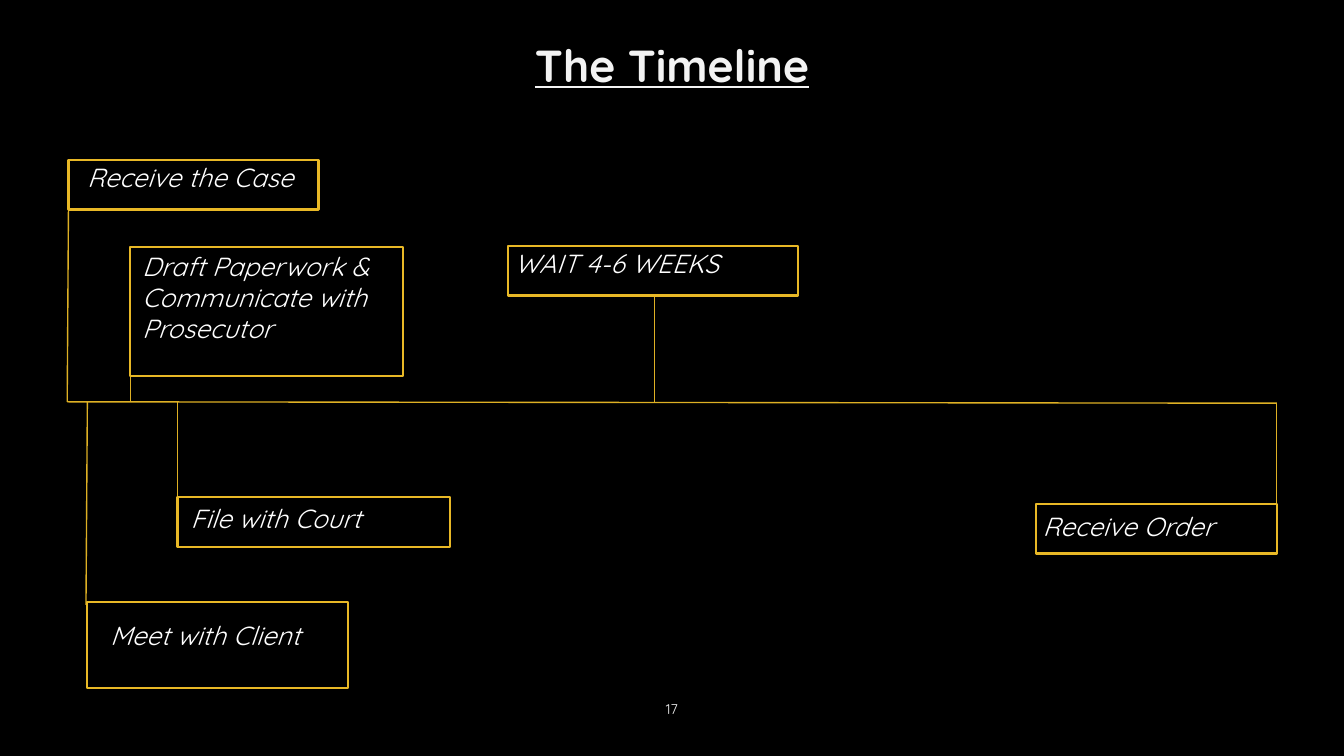
"""Build a slide that shows the timeline of a case as labelled boxes along an axis."""
from lxml.etree import SubElement
from pptx import Presentation
from pptx.dml.color import RGBColor
from pptx.enum.shapes import MSO_CONNECTOR, MSO_SHAPE
from pptx.enum.text import MSO_ANCHOR, MSO_AUTO_SIZE, PP_ALIGN
from pptx.oxml.ns import qn
from pptx.util import Inches, Pt

WIDTH = Inches(10)
HEIGHT = WIDTH * 9 // 16
CELL = 0.1
FONT = "Quicksand"
BLACK = RGBColor(0x00, 0x00, 0x00)
WHITE = RGBColor(0xFF, 0xFF, 0xFF)
TITLE_WHITE = RGBColor(0xF3, 0xF3, 0xF3)
NUMBER_WHITE = RGBColor(0xF2, 0xF2, 0xF2)
BOX_GOLD = RGBColor(0xE8, 0xB8, 0x26)
LINE_GOLD = RGBColor(0xDE, 0xB0, 0x24)

LEFT, RIGHT, AXIS = 5, 95, 29.9
STEPS = [
    ("Receive the Case", (5.1, 11.9, 18.6, 3.7), (4.7, 11, 25.3, 5.6)),
    ("Meet with Client", (6.5, 44.8, 19.4, 6.4), (6.4, 45.1, 19.8, 4.6)),
    ("Draft Paperwork & Communicate with Prosecutor",
     (9.7, 18.4, 20.3, 9.6), (8.8, 17.6, 22.3, 11.3)),
    ("File with Court", (13.2, 37, 20.3, 3.7), (12.4, 36.4, 22.3, 5.6)),
    ("WAIT 4-6 WEEKS", (37.8, 18.3, 21.6, 3.7), (36.5, 17.4, 25.3, 5.6)),
    ("Receive Order", (77.1, 37.5, 17.9, 3.7), (75.8, 37, 19.8, 5.6)),
]
LINES = [
    (LEFT, AXIS, RIGHT, 30),
    (5.1, 14.8, LEFT, AXIS),
    (6.5, AXIS, 6.4, 45),
    (9.7, 22, 9.7, AXIS),
    (13.2, AXIS, 13.2, 37.8),
    (48.7, 21.9, 48.7, AXIS),
    (RIGHT, 30, RIGHT, 40.7),
]


def grid(*cells):
    """Turn counts of grid columns and rows into slide lengths."""
    return [Inches(count * CELL) for count in cells]


def write(box, text, size, color, align=PP_ALIGN.LEFT, anchor=MSO_ANCHOR.TOP,
          bold=False, italic=False, underline=False, before=0, indent=0):
    """Put one formatted paragraph into a box."""
    frame = box.text_frame
    frame.word_wrap = True
    frame.auto_size = MSO_AUTO_SIZE.NONE
    frame.vertical_anchor = anchor
    frame.margin_left = frame.margin_right = Inches(0.1)
    frame.margin_top = frame.margin_bottom = Inches(0.1)
    para = frame.paragraphs[0]
    para.alignment = align
    para.space_before = Pt(before)
    para._p.get_or_add_pPr().set("marL", str(Inches(indent)))
    span = para.add_run()
    span.text = text
    font = span.font
    font.name, font.size = FONT, Pt(size)
    font.bold, font.italic, font.underline = bold, italic, underline
    font.color.rgb = color


def add_title(page, text):
    """Place and fill the title placeholder."""
    title = page.shapes.title
    title.left, title.top, title.width, title.height = grid(5, -0.5, 90, 10.6)
    write(title, text, 24, TITLE_WHITE, align=PP_ALIGN.CENTER,
          anchor=MSO_ANCHOR.MIDDLE, bold=True, underline=True)


def add_line(page, ends):
    """Draw one thin gold line between two grid points."""
    line = page.shapes.add_connector(MSO_CONNECTOR.STRAIGHT, *grid(*ends))
    line.line.color.rgb = LINE_GOLD
    line.line.width = Pt(0.75)
    SubElement(line._element.spPr, qn("a:effectLst"))


def add_step(page, text, border, label):
    """Draw the border of a step and its label."""
    box = page.shapes.add_shape(MSO_SHAPE.RECTANGLE, *grid(*border))
    box.shadow.inherit = False
    box.fill.background()
    box.line.color.rgb = BOX_GOLD
    box.line.width = Pt(1.25)
    write(page.shapes.add_textbox(*grid(*label)), text, 14, WHITE,
          italic=True, before=6, indent=0.08)


def main():
    """Build and save the deck."""
    deck = Presentation()
    deck.slide_width, deck.slide_height = WIDTH, HEIGHT
    page = deck.slides.add_slide(deck.slide_layouts.get_by_name("Title Only"))
    page.background.fill.solid()
    page.background.fill.fore_color.rgb = BLACK
    add_title(page, "The Timeline")
    for ends in LINES:
        add_line(page, ends)
    for text, border, label in STEPS:
        add_step(page, text, border, label)
    number = page.shapes.add_textbox(*grid(47, 51.1, 6, 4.3))
    write(number, "17", 7.5, NUMBER_WHITE, align=PP_ALIGN.CENTER)
    deck.save("out.pptx")


if __name__ == "__main__":
    main()
